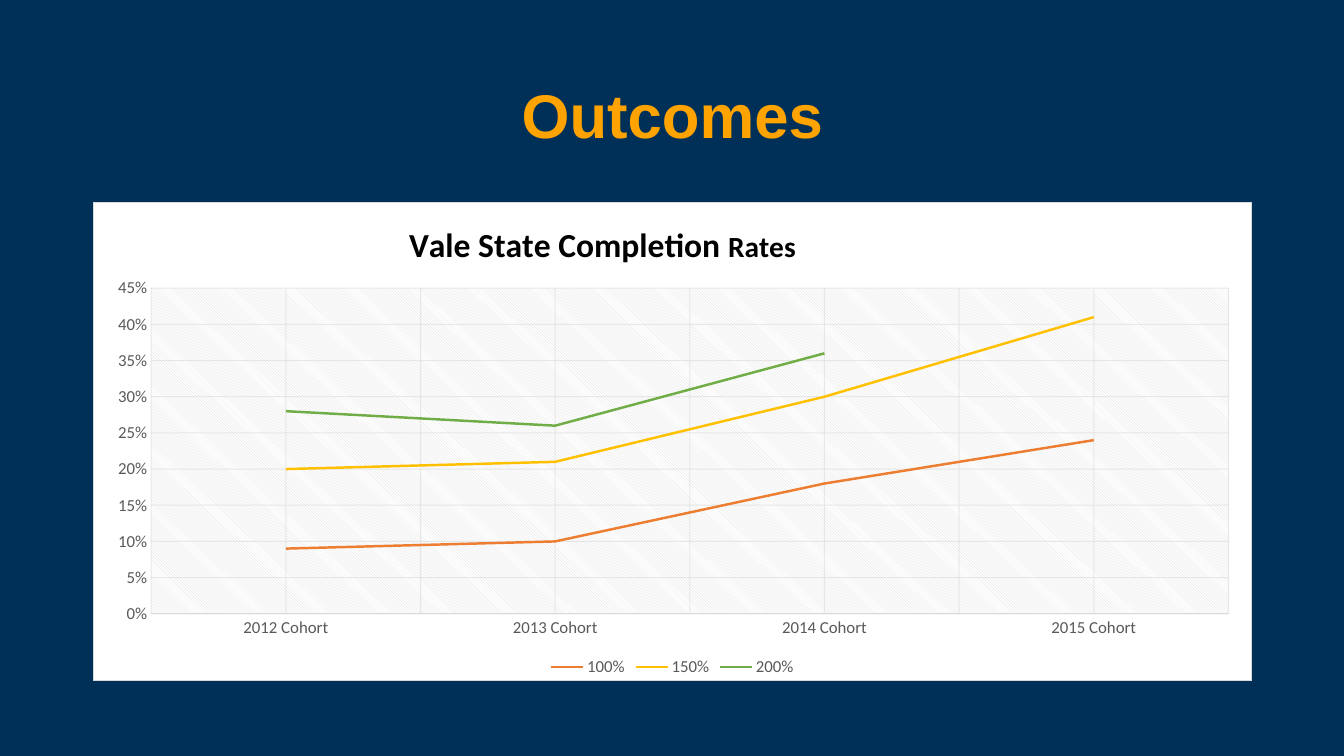
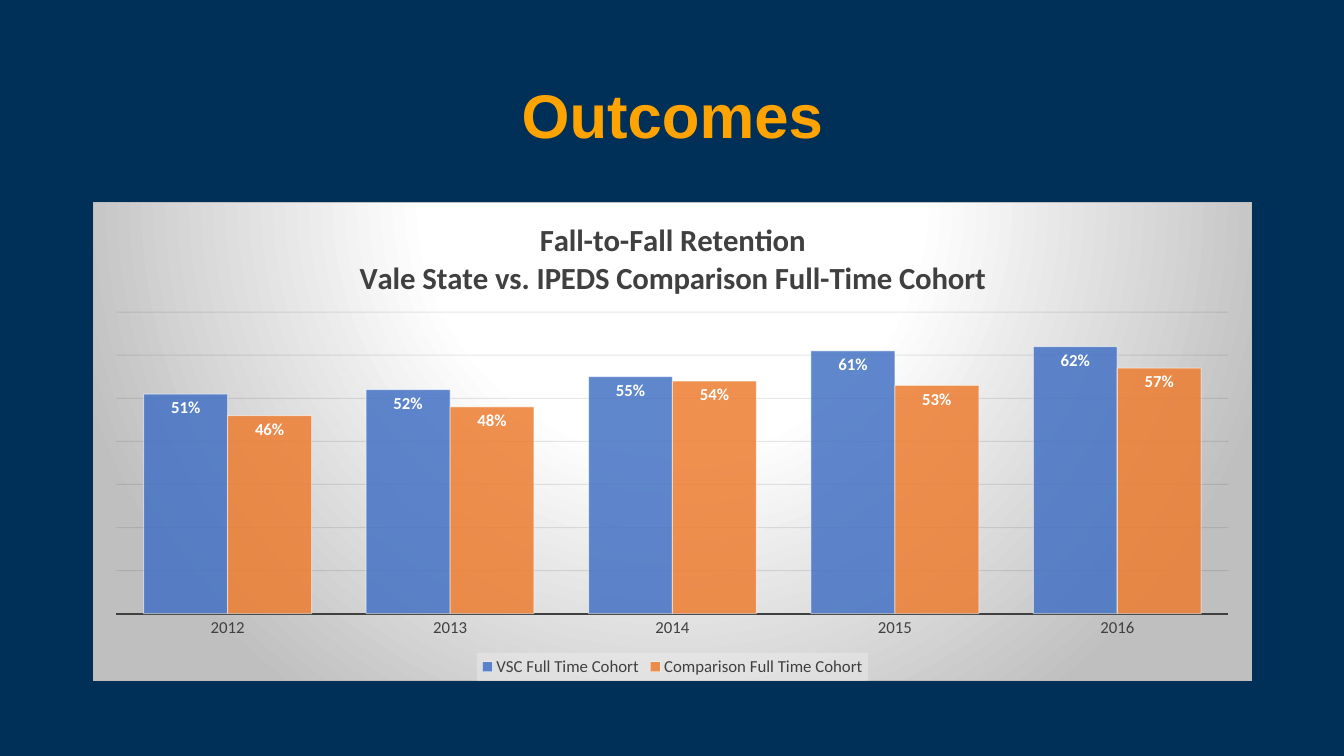
from pptx import Presentation
from pptx.chart.data import CategoryChartData
from pptx.dml.color import RGBColor
from pptx.enum import chart as ch, text
from pptx.oxml import parse_xml
from pptx.oxml.ns import nsdecls
from pptx.util import Inches, Pt

# Shared look
NAVY = RGBColor(0x00, 0x30, 0x57)
GOLD = RGBColor(0xFF, 0xA3, 0x00)
WHITE = RGBColor(0xFF, 0xFF, 0xFF)
BLACK = RGBColor(0x00, 0x00, 0x00)
INK = RGBColor(0x0D, 0x0D, 0x0D)
DARK = RGBColor(0x40, 0x40, 0x40)
GREY = RGBColor(0x59, 0x59, 0x59)
SILVER = RGBColor(0xBF, 0xBF, 0xBF)
PALE = RGBColor(0xD9, 0xD9, 0xD9)
MIST = RGBColor(0xF2, 0xF2, 0xF2)
BLUE = RGBColor(0x44, 0x72, 0xC4)
ORANGE = RGBColor(0xED, 0x7D, 0x31)
YELLOW = RGBColor(0xFF, 0xC0, 0x00)
GREEN = RGBColor(0x70, 0xAD, 0x47)
TITLE_FONT, CHART_FONT = "Arial", "Calibri"
LEFT, WIDTH = Inches(0.92), Inches(11.5)
NS = {"c": "http://schemas.openxmlformats.org/drawingml/2006/chart"}


# XML pieces for fills, lines and layouts
def color_xml(color, alpha=100):
    return f'<a:srgbClr val="{color}"><a:alpha val="{alpha * 1000}"/></a:srgbClr>'


def solid_xml(color, alpha=100):
    return f"<a:solidFill>{color_xml(color, alpha)}</a:solidFill>"


def line_xml(color, alpha=100):
    return f'<a:ln w="{int(Pt(0.75))}">{solid_xml(color, alpha)}</a:ln>'


def pattern_xml(preset, front, back):
    return (f'<a:pattFill prst="{preset}"><a:fgClr>{color_xml(front)}</a:fgClr>'
            f"<a:bgClr>{color_xml(back)}</a:bgClr></a:pattFill>")


def radial_xml(stops):
    gs = "".join(f'<a:gs pos="{pos * 1000}">{color_xml(c)}</a:gs>' for pos, c in stops)
    return (f'<a:gradFill><a:gsLst>{gs}</a:gsLst><a:path path="circle">'
            '<a:fillToRect l="50000" t="-80000" r="50000" b="180000"/>'
            "</a:path></a:gradFill>")


def shape_props(content):
    return parse_xml(f'<c:spPr {nsdecls("c", "a")}>{content}</c:spPr>')


def set_layout(el, index, target="", **sizes):
    for old in el.findall("c:layout", NS):
        el.remove(old)
    parts = f'<c:layoutTarget val="{target}"/>' if target else ""
    parts += '<c:xMode val="edge"/><c:yMode val="edge"/>'
    parts += "".join(f'<c:{k} val="{v}"/>' for k, v in sizes.items())
    el.insert(index, parse_xml(f'<c:layout {nsdecls("c")}><c:manualLayout>{parts}'
                               "</c:manualLayout></c:layout>"))


# Elements
def style_font(font, size, color, name=CHART_FONT, bold=False):
    font.size, font.name, font.bold = Pt(size), name, bold
    font.color.rgb = color


def add_slide(prs, title):
    s = prs.slides.add_slide(prs.slide_layouts[6])
    s.background.fill.solid()
    s.background.fill.fore_color.rgb = NAVY
    tf = s.shapes.add_textbox(LEFT, Inches(0.45), WIDTH, Inches(1.45)).text_frame
    tf.word_wrap = True
    tf.vertical_anchor = text.MSO_ANCHOR.MIDDLE
    p = tf.paragraphs[0]
    p.alignment, p.line_spacing = text.PP_ALIGN.CENTER, 0.9
    r = p.add_run()
    r.text = title
    style_font(r.font, 44, GOLD, TITLE_FONT, True)
    return s


def add_chart(s, kind, cats, series, color, fill, border, plot_box):
    data = CategoryChartData(number_format="0%")
    data.categories = cats
    for name, values, _ in series:
        data.add_series(name, values)
    chart = s.shapes.add_chart(kind, LEFT, Inches(2), WIDTH, Inches(4.76), data).chart
    style_font(chart.font, 12, color)
    chart.has_legend = True
    chart.legend.position = ch.XL_LEGEND_POSITION.BOTTOM
    chart.legend.include_in_layout = False
    style_font(chart.legend.font, 12, color)
    for axis in (chart.category_axis, chart.value_axis):
        axis.major_tick_mark = axis.minor_tick_mark = ch.XL_TICK_MARK.NONE
        style_font(axis.tick_labels.font, 12, color)
    chart.value_axis.minimum_scale = 0
    chart.value_axis.tick_labels.number_format = "0%"
    chart.value_axis.tick_labels.number_format_is_linked = False
    chart.plots[0].vary_by_categories = False
    root = chart.element
    root.find("c:chart", NS).addnext(shape_props(fill + line_xml(border)))
    x, y, w, h = plot_box
    set_layout(root.find(".//c:plotArea", NS), 0, "inner", x=x, y=y, w=w, h=h)
    return chart


def add_chart_title(chart, lines, color):
    """Each line is a list of (text, size) runs."""
    chart.has_title = True
    tf = chart.chart_title.text_frame
    for i, runs in enumerate(lines):
        p = tf.add_paragraph() if i else tf.paragraphs[0]
        for words, size in runs:
            r = p.add_run()
            r.text = words
            style_font(r.font, size, color, bold=True)


def style_gridlines(chart, color, alpha):
    for kind in ("major", "minor"):
        for grid in chart.element.findall(f".//c:{kind}Gridlines", NS):
            grid.append(shape_props(line_xml(color, alpha)))


def style_axis_line(axis, color, width):
    axis.format.line.color.rgb = color
    axis.format.line.width = Pt(width)


# Slides
def completion_slide(prs):
    series = [("100%", (0.09, 0.10, 0.18, 0.24), ORANGE),
              ("150%", (0.20, 0.21, 0.30, 0.41), YELLOW),
              ("200%", (0.28, 0.26, 0.36, None), GREEN)]
    cats = [f"{year} Cohort" for year in range(2012, 2016)]
    chart = add_chart(add_slide(prs, "Outcomes"), ch.XL_CHART_TYPE.LINE, cats, series,
                      GREY, solid_xml(WHITE), PALE, (0.05, 0.18, 0.93, 0.68))
    add_chart_title(chart, [[("Vale State Completion ", 24), ("Rates", 21)]], BLACK)
    set_layout(chart.element.find("c:chart/c:title", NS), 1, x=0.27, y=0.04)

    # Axes and grid
    cat, val = chart.category_axis, chart.value_axis
    cat.has_major_gridlines = cat.has_minor_gridlines = True
    val.has_major_gridlines = True
    val.maximum_scale, val.major_unit = 0.45, 0.05
    style_axis_line(cat, PALE, 0.75)
    val.format.line.fill.background()
    style_gridlines(chart, PALE, 54)
    chart.element.find(".//c:plotArea", NS).append(
        shape_props(pattern_xml("ltDnDiag", PALE, WHITE)))

    # Lines
    for ser, (_, _, color) in zip(chart.plots[0].series, series):
        ser.smooth = False
        ser.marker.style = ch.XL_MARKER_STYLE.NONE
        ser.format.line.color.rgb = color
        ser.format.line.width = Pt(1.75)


def retention_slide(prs):
    series = [("VSC Full Time Cohort", (0.51, 0.52, 0.55, 0.61, 0.62), BLUE),
              ("Comparison Full Time Cohort", (0.46, 0.48, 0.54, 0.53, 0.57), ORANGE)]
    cats = [str(year) for year in range(2012, 2017)]
    backdrop = radial_xml([(0, WHITE), (39, WHITE), (100, SILVER)])
    chart = add_chart(add_slide(prs, "Outcomes"), ch.XL_CHART_TYPE.COLUMN_CLUSTERED,
                      cats, series, DARK, backdrop, SILVER, (0.02, 0.23, 0.96, 0.63))
    add_chart_title(chart, [[("Fall-to-Fall Retention", 22)],
                            [("Vale State vs. IPEDS Comparison Full-Time Cohort", 22)]],
                    DARK)

    # Axes, grid and legend panel
    val = chart.value_axis
    val.visible = False
    val.has_major_gridlines = True
    val.maximum_scale, val.major_unit = 0.7, 0.1
    style_axis_line(chart.category_axis, DARK, 1.5)
    style_gridlines(chart, INK, 10)
    chart.element.find(".//c:legend/c:txPr", NS).addprevious(
        shape_props(solid_xml(MIST, 39)))

    # Columns and their labels
    plot = chart.plots[0]
    plot.gap_width, plot.overlap = 65, 0
    names = chart.element.findall(".//c:ser/c:tx", NS)
    for ser, name, (_, _, color) in zip(plot.series, names, series):
        ser.invert_if_negative = False
        name.addnext(shape_props(solid_xml(color, 85) + line_xml(WHITE, 50)))
        labels = ser.data_labels
        labels.show_value = True
        labels.position = ch.XL_LABEL_POSITION.INSIDE_END
        labels.number_format, labels.number_format_is_linked = "0%", False
        style_font(labels.font, 12, WHITE, bold=True)


def main():
    prs = Presentation()
    prs.slide_width, prs.slide_height = Inches(13.33), Inches(7.5)
    completion_slide(prs)
    retention_slide(prs)
    prs.save("out.pptx")


if __name__ == "__main__":
    main()
